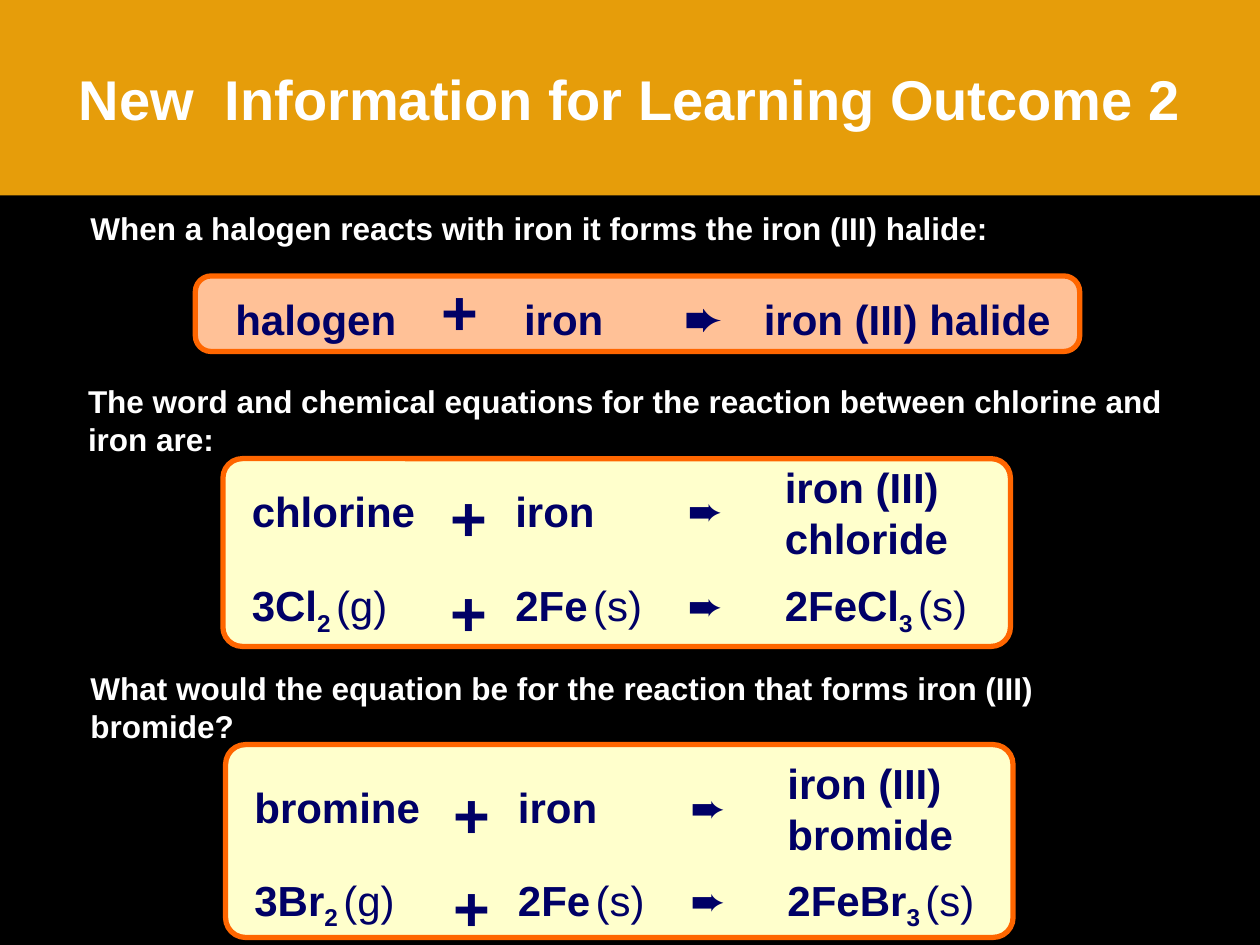
from lxml import etree
from pptx import Presentation
from pptx.dml.color import RGBColor
from pptx.enum.shapes import MSO_SHAPE
from pptx.enum.text import MSO_ANCHOR, MSO_AUTO_SIZE, PP_ALIGN
from pptx.oxml.ns import qn
from pptx.util import Pt

ROUNDED = MSO_SHAPE.ROUNDED_RECTANGLE
MIDDLE = MSO_ANCHOR.MIDDLE
CENTER = PP_ALIGN.CENTER
NO_FIT = MSO_AUTO_SIZE.NONE

COLORS = {"back": "000000", "band": "E69D0A", "white": "FFFFFF", "navy": "000066",
          "orange": "FF6600", "peach": "FFC197", "cream": "FFFFCC"}
TITLE = "New  Information for Learning Outcome 2"
STATEMENTS = [
    ("When a halogen reacts with iron it forms the iron (III) halide:", (44.6, 115.9, 638, 29)),
    ("The word and chemical equations for the reaction between chlorine and iron are:",
     (43.2, 214.6, 660, 51)),
    ("What would the equation be for the reaction that forms iron (III) bromide?",
     (44.6, 378.7, 635, 51)),
]
GENERAL = [("halogen", 24, "Arial"), ("\t+", 36, "Arial"), ("\tiron", 24, "Arial"),
           ("\t➨", 24, "Times New Roman"), ("\tiron (III) halide", 24, "Arial")]
GENERAL_TABS = [118, 165, 257, 302]
REACTIONS = [
    {"box": (127.4, 262.1, 450, 107.3), "rows": (273.6, 327.6),
     "words": ("chlorine", "iron", "iron (III)\vchloride"),
     "formulas": (("3Cl", "2", "(g)"), ("2Fe", "", "(s)"), ("2FeCl", "3", "(s)"))},
    {"box": (128.9, 425.5, 450, 110.2), "rows": (442.8, 496.1),
     "words": ("bromine", "iron", "iron (III)\vbromide"),
     "formulas": (("3Br", "2", "(g)"), ("2Fe", "", "(s)"), ("2FeBr", "3", "(s)"))},
]
TERM_COLUMNS = [(9.4, 117), (160, 132), (314, 141)]
SIGNS = [("+", 36, 123, 33, -3.4), ("➨", 24, 258.5, 45, 0)]
TWO_LINE_RISE = 13.3


def rgb(name):
    return RGBColor.from_string(COLORS[name])


def set_font(font, size, color, bold=True, name="Arial"):
    font.size, font.bold, font.name = Pt(size), bold, name
    font.color.rgb = rgb(color)


def add_text(shapes, at, size, color, text=""):
    tf = shapes.add_textbox(*map(Pt, at)).text_frame
    tf.word_wrap = True
    p = tf.paragraphs[0]
    p.text = text
    set_font(p.font, size, color)
    return p


def add_panel(shapes, at, fill, corner):
    sp = shapes.add_shape(ROUNDED, *map(Pt, at))
    sp.adjustments[0] = corner
    sp.shadow.inherit = False
    sp.fill.solid()
    sp.fill.fore_color.rgb = rgb(fill)
    sp.line.color.rgb = rgb("orange")
    sp.line.width = Pt(3)


def add_formula(p, symbol, count, state):
    for text, size, bold, base in ((symbol, 24, True, 0), (count, 24, True, -25000),
                                   (" ", 11, True, 0), (state, 24, False, 0)):
        if text:
            r = p.add_run()
            r.text = text
            set_font(r.font, size, "navy", bold)
            if base:
                r._r.get_or_add_rPr().set("baseline", str(base))


def add_general(slide):
    shapes = slide.shapes.add_group_shape().shapes
    add_panel(shapes, (111.6, 157.7, 505.4, 43.2), "peach", 0.21)
    p = add_text(shapes, (127.4, 160.6, 488, 42.5), 24, "navy")
    p.line_spacing = 0.8
    tabs = etree.Element(qn("a:tabLst"))
    for pos in GENERAL_TABS:
        etree.SubElement(tabs, qn("a:tab"), pos=str(Pt(pos)), algn="l")
    p._p.pPr.find(qn("a:defRPr")).addprevious(tabs)
    for text, size, name in GENERAL:
        r = p.add_run()
        r.text = text
        set_font(r.font, size, "navy", name=name)


def add_reaction(slide, reaction):
    shapes = slide.shapes.add_group_shape().shapes
    add_panel(shapes, reaction["box"], "cream", 0.103)
    left = reaction["box"][0]
    word_top, formula_top = reaction["rows"]
    for (dx, w), word, formula in zip(TERM_COLUMNS, reaction["words"], reaction["formulas"]):
        rise = TWO_LINE_RISE if "\v" in word else 0
        h = 61.2 if rise else 34
        add_text(shapes, (left + dx, word_top - rise, w, h), 24, "navy", word)
        p = add_text(shapes, (left + dx, formula_top, w, 34), 24, "navy")
        add_formula(p, *formula)
    for top in reaction["rows"]:
        for sign, size, dx, w, dy in SIGNS:
            add_text(shapes, (left + dx, top + dy, w, size * 1.2 + 5), size, "navy", sign)


def main():
    """Build the halogen and iron equations slide."""
    prs = Presentation()
    prs.slide_width, prs.slide_height = Pt(720), Pt(540)
    s = prs.slides.add_slide(prs.slide_layouts[5])
    s.background.fill.solid()
    s.background.fill.fore_color.rgb = rgb("back")

    title = s.shapes.title
    title.left, title.top, title.width, title.height = map(Pt, (0, 0, 720, 111.6))
    title.fill.solid()
    title.fill.fore_color.rgb = rgb("band")
    tf = title.text_frame
    tf.text = TITLE
    tf.auto_size, tf.vertical_anchor = NO_FIT, MIDDLE
    p = tf.paragraphs[0]
    p.alignment = CENTER
    set_font(p.font, 32, "white")

    for text, at in STATEMENTS:
        add_text(s.shapes, at, 18, "white", text)
    add_general(s)
    for reaction in REACTIONS:
        add_reaction(s, reaction)
    prs.save("out.pptx")


if __name__ == "__main__":
    main()
